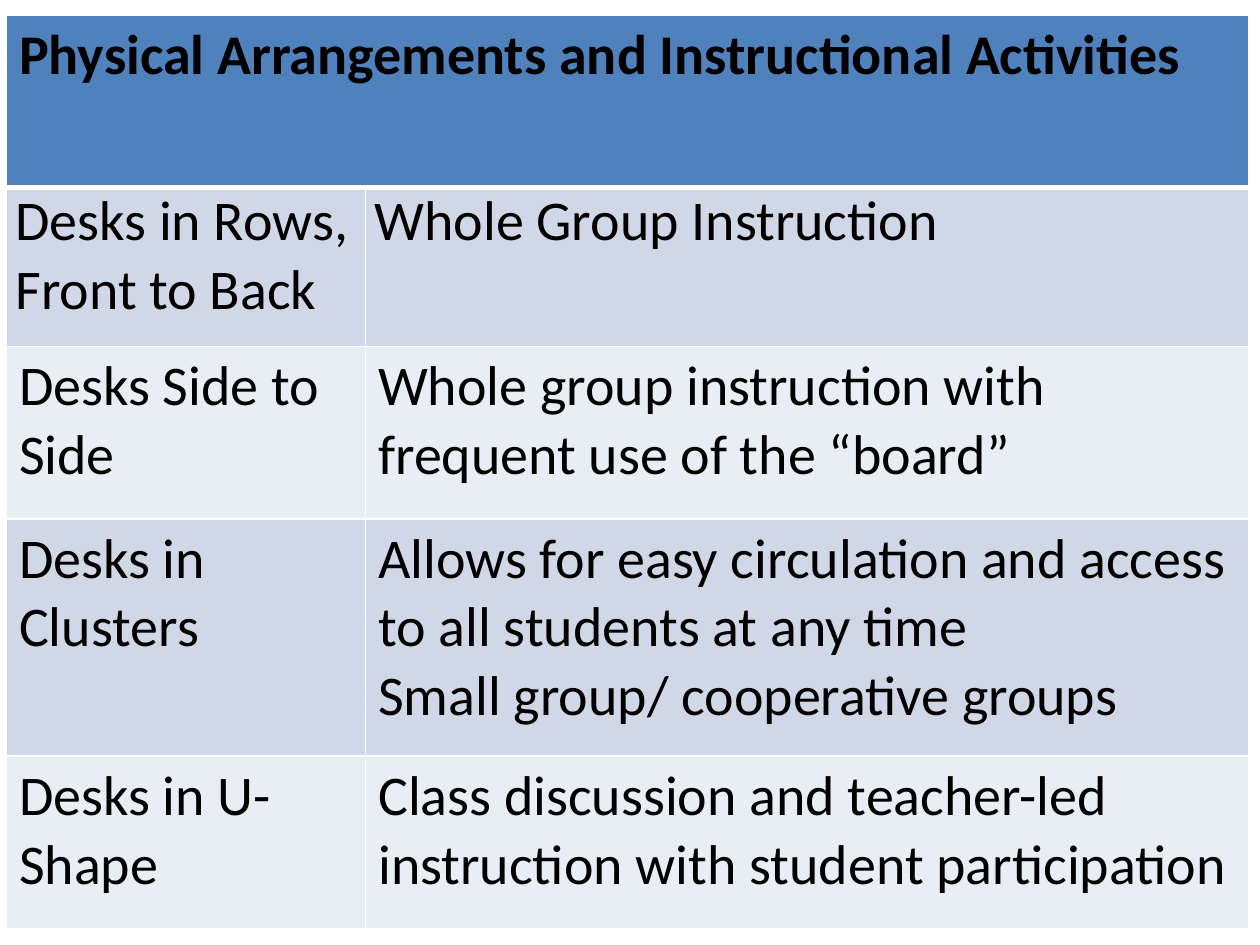
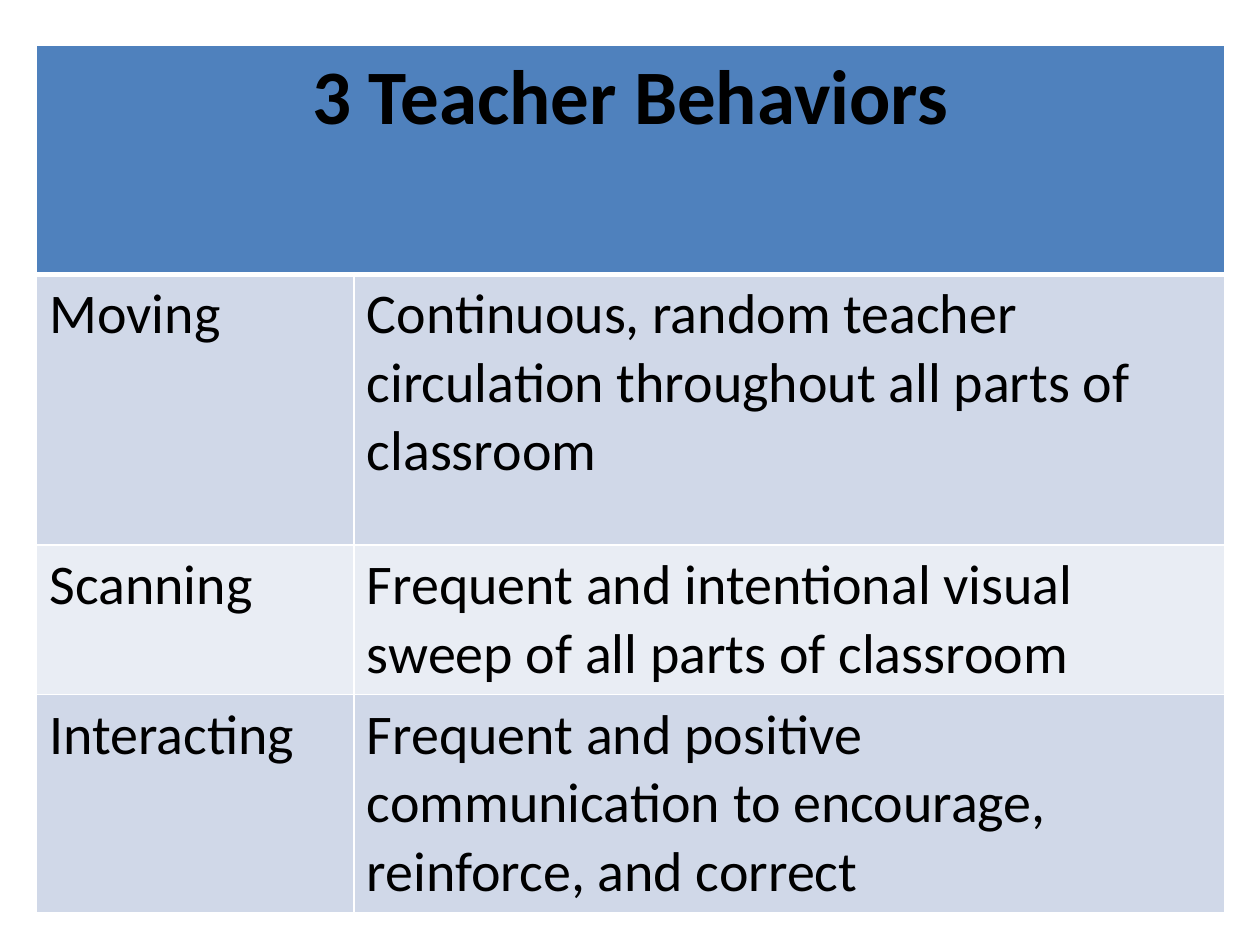
import lxml.etree
import pptx
import pptx.dml.color
import pptx.enum.text
import pptx.oxml.ns
import pptx.util

Cm = pptx.util.Cm
Pt = pptx.util.Pt
qn = pptx.oxml.ns.qn
RGBColor = pptx.dml.color.RGBColor
ALIGN = pptx.enum.text.PP_ALIGN

BLUE = RGBColor(0x4F, 0x81, 0xBD)
BANDS = (RGBColor(0xE9, 0xED, 0xF4), RGBColor(0xD0, 0xD8, 0xE8))
BLACK = RGBColor(0x00, 0x00, 0x00)
WHITE = RGBColor(0xFF, 0xFF, 0xFF)

BODY = {"name": "Calibri", "size": Pt(32), "bold": False}
HEAD = {**BODY, "bold": True}
TIGHT = {"margin_left": Cm(0.18), "margin_right": Cm(0.18),
         "margin_top": 0, "margin_bottom": 0}

DESKS = [
    ("Desks in Rows,\nFront to Back", "Whole Group Instruction"),
    ("Desks Side to Side",
     "Whole group instruction with frequent use of the “board”"),
    ("Desks in Clusters",
     "Allows for easy circulation and access to all students at any time\n"
     "Small group/ cooperative groups"),
    ("Desks in U-Shape",
     "Class discussion and teacher-led instruction with student participation"),
]
ACTS = [
    ("Moving",
     "Continuous, random teacher circulation throughout all parts of classroom"),
    ("Scanning",
     "Frequent and intentional visual sweep of all parts of classroom"),
    ("Interacting",
     "Frequent and positive communication to encourage, reinforce, and correct"),
]


def apply(item, form):
    for key, value in form.items():
        setattr(item, key, value)


class Deck:
    def __init__(self):
        self.show = pptx.Presentation()
        apply(self.show, {"slide_width": Cm(25.4), "slide_height": Cm(19.05)})
        self.slide = None

    def page(self):
        self.slide = self.show.slides.add_slide(self.show.slide_layouts[6])
        fill = self.slide.background.fill
        fill.solid()
        fill.fore_color.rgb = WHITE

    def edge(self, cell, side, width):
        line = lxml.etree.SubElement(
            cell._tc.get_or_add_tcPr(), qn(f"a:ln{side}"), w=str(Pt(width)))
        fill = lxml.etree.SubElement(line, qn("a:solidFill"))
        lxml.etree.SubElement(fill, qn("a:srgbClr"), val=str(WHITE))

    def cell(self, cell, row, color):
        thick = {0: "B", 1: "T"}.get(row)
        for side in "LRTB":
            self.edge(cell, side, 3 if side == thick else 1)
        cell.fill.solid()
        cell.fill.fore_color.rgb = color

    def text(self, cell, words, form, align=ALIGN.LEFT):
        cell.text = words
        for para in cell.text_frame.paragraphs:
            para.alignment = align
            apply(para.font, form)
            for run in para.runs:
                apply(run.font, form)
                run.font.color.rgb = BLACK

    def table(self, left, top, wide, high, title, rows, form, align=ALIGN.LEFT):
        grid = self.slide.shapes.add_table(
            len(high), len(wide), Cm(left), Cm(top),
            Cm(sum(wide)), Cm(sum(high))).table
        for col, width in zip(grid.columns, wide):
            col.width = Cm(width)
        for row, height in zip(grid.rows, high):
            row.height = Cm(height)
        for r in range(len(high)):
            for c in range(len(wide)):
                self.cell(grid.cell(r, c), r, BANDS[r % 2] if r else BLUE)
        grid.cell(0, 0).merge(grid.cell(0, len(wide) - 1))
        self.text(grid.cell(0, 0), title, form, align)
        for r, row in enumerate(rows, 1):
            for c, words in enumerate(row):
                self.text(grid.cell(r, c), words, BODY)
        return grid


def main():
    deck = Deck()
    deck.page()
    grid = deck.table(0.13, 0.3, (7.24, 17.81), (3.48, 3.2, 3.48, 4.78, 3.48),
                      "Physical Arrangements and Instructional Activities",
                      DESKS, HEAD)
    for cell in grid.rows[1].cells:
        apply(cell, TIGHT)
    deck.page()
    deck.table(0.74, 0.91, (6.4, 17.55), (4.62, 5.46, 2.97, 4.32),
               "3 Teacher Behaviors", ACTS, {**HEAD, "size": Pt(44)},
               ALIGN.CENTER)
    deck.show.save("out.pptx")


if __name__ == "__main__":
    main()
